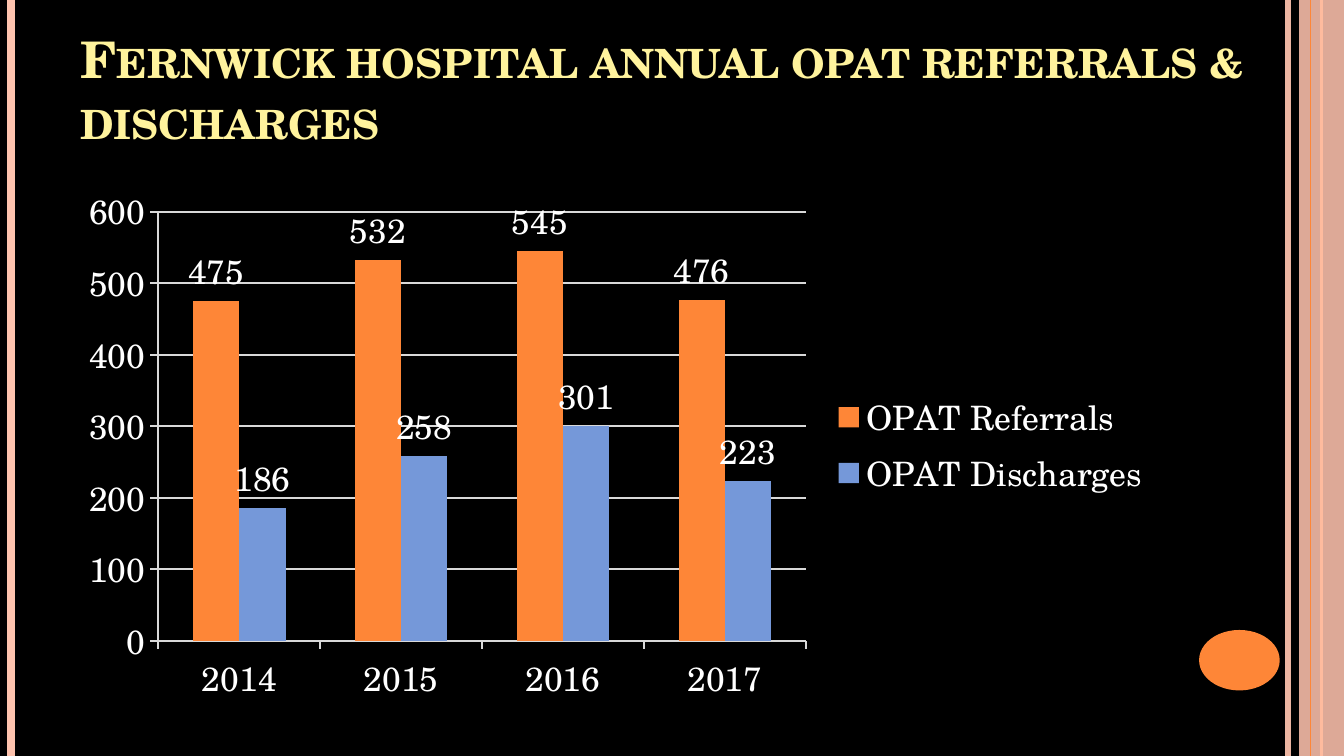
from lxml.etree import SubElement
from pptx import Presentation
from pptx.chart.data import CategoryChartData
from pptx.dml.color import RGBColor
from pptx.enum.chart import XL_CHART_TYPE, XL_LABEL_POSITION, XL_LEGEND_POSITION, XL_TICK_MARK
from pptx.enum.shapes import MSO_CONNECTOR, MSO_SHAPE
from pptx.enum.text import MSO_ANCHOR
from pptx.oxml.ns import qn
from pptx.util import Pt

WIDTH, HEIGHT = 720, 405
FONT = "TeX Gyre Schola"
ORANGE, PEACH, BLUE = "FE8637", "FEC3AE", "7598D9"
WHITE, YELLOW, BLACK, AXIS_GREY = "FFFFFF", "FFF39D", "000000", "D9D9D9"

TITLE = "Fernwick hospital annual opat referrals & discharges"
YEARS = ["2014", "2015", "2016", "2017"]
SERIES = [
    ("OPAT Referrals", (475, 532, 545, 476), ORANGE),
    ("OPAT Discharges", (186, 258, 301, 223), BLUE),
]
STRIPES_BEHIND = [(690, PEACH, 3, 93), (6, PEACH, 4.5, 100), (708, ORANGE, 1.5, 100)]
STRIPES_IN_FRONT = [(702, ORANGE, 0.75, 100)]
BAND = (MSO_SHAPE.RECTANGLE, (696, 0, 24, HEIGHT), PEACH, 87)
DISC = (MSO_SHAPE.OVAL, (642.4, 337.5, 43.2, 32.4), ORANGE, 100)
TITLE_BOX = (36, 16, 641.5, 67.5)
CHART_BOX = (36, 94.5, 588, 288)


def points(lengths):
    return [Pt(length) for length in lengths]


def paint(fill, color, opacity=100):
    fill.solid()
    fill.fore_color.rgb = RGBColor.from_string(color)
    if opacity < 100:
        color_xml = fill._xPr.find(qn("a:solidFill"))[0]
        SubElement(color_xml, qn("a:alpha")).set("val", str(opacity * 1000))


def style_font(font, size, color):
    font.name = FONT
    font.size = Pt(size)
    font.color.rgb = RGBColor.from_string(color)


def add_stripe(slide, x, color, width, opacity):
    stripe = slide.shapes.add_connector(MSO_CONNECTOR.STRAIGHT, *points((x, 0, x, HEIGHT)))
    stripe.line.width = Pt(width)
    paint(stripe.line.fill, color, opacity)
    SubElement(stripe._element.spPr, qn("a:effectLst"))


def add_ornament(slide, preset, box, color, opacity):
    ornament = slide.shapes.add_shape(preset, *points(box))
    ornament.shadow.inherit = False
    ornament.line.fill.background()
    paint(ornament.fill, color, opacity)


def add_title(slide):
    frame = slide.shapes.add_textbox(*points(TITLE_BOX)).text_frame
    frame.word_wrap = True
    frame.vertical_anchor = MSO_ANCHOR.BOTTOM
    heading = frame.paragraphs[0]
    run = heading.add_run()
    run.text = TITLE
    style_font(run.font, 27, YELLOW)
    run.font.bold = True
    run.font._element.set("cap", "small")


def add_referral_chart(slide):
    data = CategoryChartData()
    data.categories = YEARS
    for name, counts, _ in SERIES:
        data.add_series(name, counts)
    chart = slide.shapes.add_chart(
        XL_CHART_TYPE.COLUMN_CLUSTERED, *points(CHART_BOX), data).chart
    style_font(chart.font, 18, WHITE)
    chart.has_title = False
    chart.has_legend = True
    chart.legend.position = XL_LEGEND_POSITION.RIGHT
    chart.legend.include_in_layout = False

    years, counts = chart.category_axis, chart.value_axis
    counts.minimum_scale, counts.maximum_scale, counts.major_unit = 0, 600, 100
    counts.has_major_gridlines = True
    for axis in (years, counts):
        axis.major_tick_mark = XL_TICK_MARK.OUTSIDE
    for part in (years, counts, counts.major_gridlines):
        part.format.line.width = Pt(1)
        paint(part.format.line.fill, AXIS_GREY)

    plot = chart.plots[0]
    plot.gap_width, plot.overlap = 150, 0
    plot.vary_by_categories = False
    for columns, (_, _, color) in zip(plot.series, SERIES):
        paint(columns.format.fill, color)
        columns.data_labels.show_value = True
        columns.data_labels.position = XL_LABEL_POSITION.OUTSIDE_END
        style_font(columns.data_labels.font, 18, WHITE)


def main():
    deck = Presentation()
    deck.slide_width, deck.slide_height = points((WIDTH, HEIGHT))
    slide = deck.slides.add_slide(deck.slide_layouts[6])
    paint(slide.background.fill, BLACK)
    for stripe in STRIPES_BEHIND:
        add_stripe(slide, *stripe)
    add_ornament(slide, *BAND)
    for stripe in STRIPES_IN_FRONT:
        add_stripe(slide, *stripe)
    add_ornament(slide, *DISC)
    add_title(slide)
    add_referral_chart(slide)
    deck.save("out.pptx")


if __name__ == "__main__":
    main()
